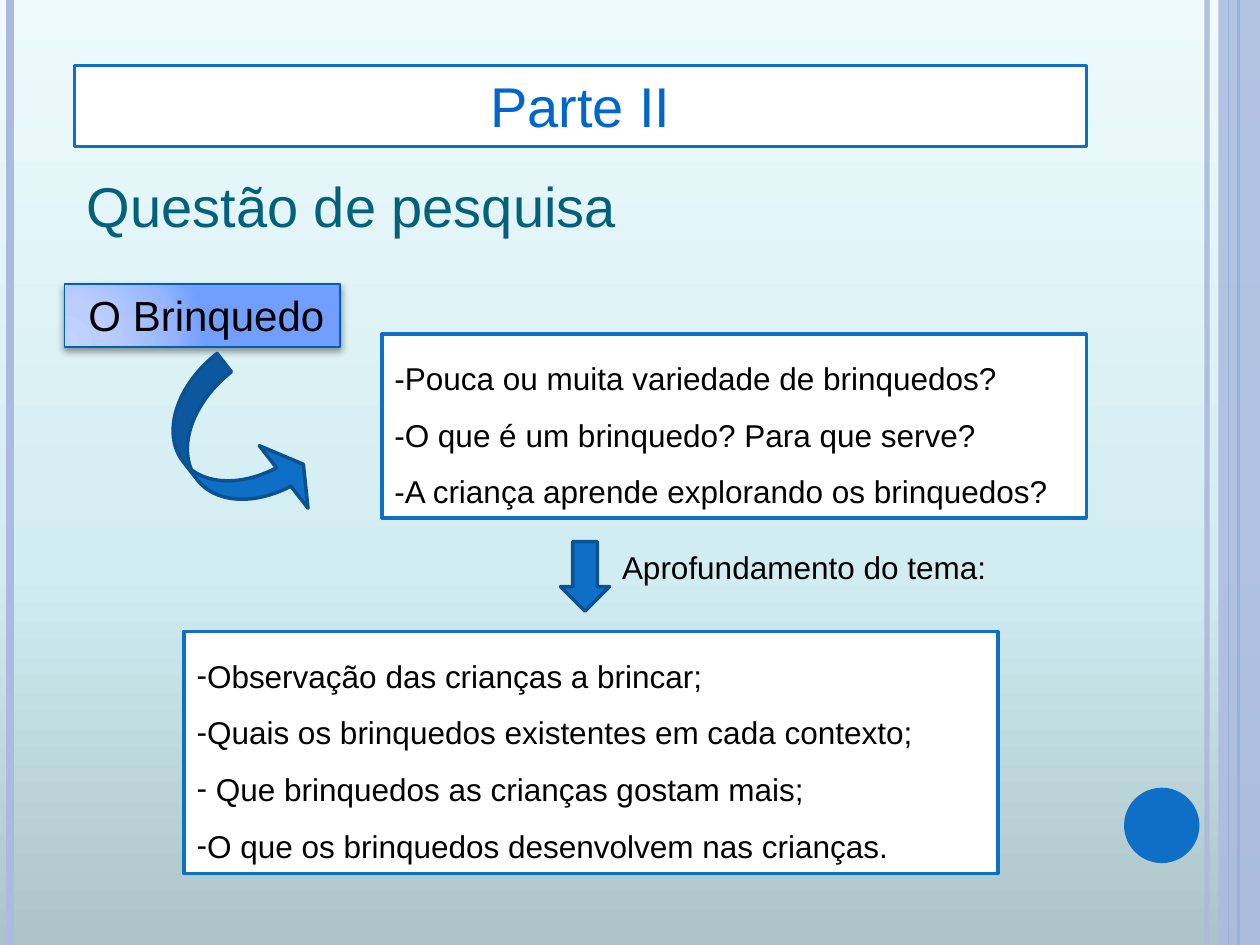
import lxml.etree
import pptx
import pptx.dml.color
import pptx.enum.shapes
import pptx.enum.text
import pptx.oxml
import pptx.oxml.ns
import pptx.util

Cm, Pt = pptx.util.Cm, pptx.util.Pt
SHAPE = pptx.enum.shapes.MSO_SHAPE
ALIGN = pptx.enum.text.PP_ALIGN
ANCHOR = pptx.enum.text.MSO_ANCHOR
qn = pptx.oxml.ns.qn
NAMESPACE = pptx.oxml.ns.nsdecls("a")

COLORS = {
    "blue": "0F6FC6", "dark blue": "0B5292", "lilac": "ABBBDF", "white": "FFFFFF",
    "title": "0066CC", "heading": "04617B", "text": "000000", "label line": "0060B6",
}
BACKGROUND_STOPS = [(0, "AAC4C7"), (40, "D2EDF1"), (100, "EEFAFC")]
LABEL_STOPS = [(0, "C2D3FF"), (30, "BCCEFF"), (75, "97B6FF"), (100, "719EFF")]

TITLE = "Parte II"
HEADING = "Questão de pesquisa"
LABEL = " O Brinquedo"
QUESTIONS = [
    "-Pouca ou muita variedade de brinquedos?",
    "-O que é um brinquedo? Para que serve?",
    "-A criança aprende explorando os brinquedos?",
]
DEEPENING = "Aprofundamento do tema:"
TOPICS = [
    "Observação das crianças a brincar;",
    "Quais os brinquedos existentes em cada contexto;",
    " Que brinquedos as crianças gostam mais;",
    "O que os brinquedos desenvolvem nas crianças.",
]

# x in cm, colour, width in points, opacity in percent
STRIPES = [(24.33, "lilac", 3, 93), (0.2, "lilac", 4.5, 100),
           (24.97, "blue", 1.5, 100), (24.77, "blue", 0.75, 100)]


def rgb(name):
    return pptx.dml.color.RGBColor.from_string(COLORS[name])


def set_opacity(solid_fill, percent):
    color = solid_fill.find(qn("a:srgbClr"))
    lxml.etree.SubElement(color, qn("a:alpha")).set("val", str(percent * 1000))


def set_gradient(fill, parent, stops, direction):
    """Fill with stops given as (percent, hex); direction is the a:lin or a:path XML."""
    fill.gradient()
    stop_xml = "".join(f'<a:gs pos="{position * 1000}"><a:srgbClr val="{color}"/></a:gs>'
                       for position, color in stops)
    gradient = pptx.oxml.parse_xml(
        f'<a:gradFill {NAMESPACE} rotWithShape="1"><a:gsLst>{stop_xml}</a:gsLst>{direction}</a:gradFill>')
    old = parent.find(".//" + qn("a:gradFill"))
    old.getparent().replace(old, gradient)


def paint(shape, fill=None, line=None, width=2):
    if fill:
        shape.fill.solid()
        shape.fill.fore_color.rgb = rgb(fill)
    if line:
        shape.line.color.rgb = rgb(line)
        shape.line.width = Pt(width)
    else:
        shape.line.fill.background()


def add_shape(page, kind, bounds, fill=None, line=None, width=2):
    shape = page.shapes.add_shape(kind, *map(Cm, bounds))
    shape.shadow.inherit = False
    paint(shape, fill, line, width)
    return shape


def add_stripe(page, x, color, width, opacity):
    stripe = page.shapes.add_connector(
        pptx.enum.shapes.MSO_CONNECTOR.STRAIGHT, Cm(x), 0, Cm(x), Cm(19.05))
    stripe.line.color.rgb = rgb(color)
    stripe.line.width = Pt(width)
    if opacity < 100:
        set_opacity(stripe.line._get_or_add_ln().find(qn("a:solidFill")), opacity)
    lxml.etree.SubElement(stripe._element.spPr, qn("a:effectLst"))


def write(shape, lines, size, color="text", align=ALIGN.LEFT, spacing=1.0, wrap=True, bullet=None):
    frame = shape.text_frame
    frame.text = "\n".join(lines)
    frame.word_wrap = wrap
    frame.auto_size = pptx.enum.text.MSO_AUTO_SIZE.NONE
    frame.vertical_anchor = ANCHOR.TOP
    for para in frame.paragraphs:
        para.alignment = align
        para.line_spacing = spacing
        para.space_before = para.space_after = Pt(0)
        if bullet:
            properties = para._p.get_or_add_pPr()
            properties.set("marL", "0")
            properties.set("indent", "0")
            lxml.etree.SubElement(properties, qn("a:buFont")).set("typeface", "Arial")
            lxml.etree.SubElement(properties, qn("a:buChar")).set("char", bullet)
        for span in para.runs:
            span.font.name = "Arial"
            span.font.size = Pt(size)
            span.font.color.rgb = rgb(color)


def place(shape, bounds):
    shape.left, shape.top, shape.width, shape.height = map(Cm, bounds)


def add_frame(page):
    set_gradient(page.background.fill, page._element, BACKGROUND_STOPS,
                 '<a:lin ang="16200000" scaled="0"/>')
    for stripe in STRIPES:
        add_stripe(page, *stripe)
    band = add_shape(page, SHAPE.RECTANGLE, (24.56, 0, 0.84, 19.05), "lilac")
    set_opacity(band._element.spPr.find(qn("a:solidFill")), 87)
    add_shape(page, SHAPE.OVAL, (22.66, 15.88, 1.52, 1.52), "blue")


def add_label(page):
    label = add_shape(page, SHAPE.RECTANGLE, (1.3, 5.72, 5.56, 1.27), line="label line", width=1)
    set_gradient(label.fill, label._element.spPr, LABEL_STOPS,
                 '<a:path path="circle"><a:fillToRect l="5000" t="100000" r="120000" b="10000"/></a:path>')
    effects = label._element.spPr.find(qn("a:effectLst"))
    effects.append(pptx.oxml.parse_xml(
        f'<a:outerShdw {NAMESPACE} blurRad="{Pt(4)}" dist="{Pt(2)}" dir="5400000" rotWithShape="0">'
        f'<a:srgbClr val="{COLORS["text"]}"><a:alpha val="40000"/></a:srgbClr></a:outerShdw>'))
    write(label, [LABEL], 24, wrap=False)


def main():
    deck = pptx.Presentation()
    deck.slide_width, deck.slide_height = Cm(25.4), Cm(19.05)
    page = deck.slides.add_slide(deck.slide_layouts[1])
    add_frame(page)

    title, topics = page.shapes.title, page.placeholders[1]
    place(title, (1.5, 1.32, 20.4, 1.63))
    paint(title, "white", "blue")
    write(title, [TITLE], 32, "title", ALIGN.CENTER)

    heading = page.shapes.add_textbox(*map(Cm, (1.5, 3.33, 11.28, 1.63)))
    write(heading, [HEADING], 32, "heading", wrap=False)
    add_label(page)

    questions = add_shape(page, SHAPE.RECTANGLE, (7.7, 6.73, 14.2, 3.71), "white", "blue")
    write(questions, QUESTIONS, 18, align=ALIGN.JUSTIFY, spacing=1.5)

    curve = add_shape(page, SHAPE.CURVED_RIGHT_ARROW, (3.81, 7.32, 1.88, 3.63), "blue", "dark blue")
    curve.rotation = 322.1
    for index, value in enumerate((0.25, 0.85, 0.25)):
        curve.adjustments[index] = value
    add_shape(page, SHAPE.DOWN_ARROW, (11.3, 10.92, 0.99, 1.4), "blue", "dark blue")

    deepening = page.shapes.add_textbox(*map(Cm, (12.29, 10.92, 8.18, 1.02)))
    write(deepening, [DEEPENING], 18, align=ALIGN.JUSTIFY)

    place(topics, (3.71, 12.73, 16.41, 4.88))
    paint(topics, "white", "blue")
    write(topics, TOPICS, 18, align=ALIGN.JUSTIFY, spacing=1.5, bullet="-")

    deck.save("out.pptx")


if __name__ == "__main__":
    main()
